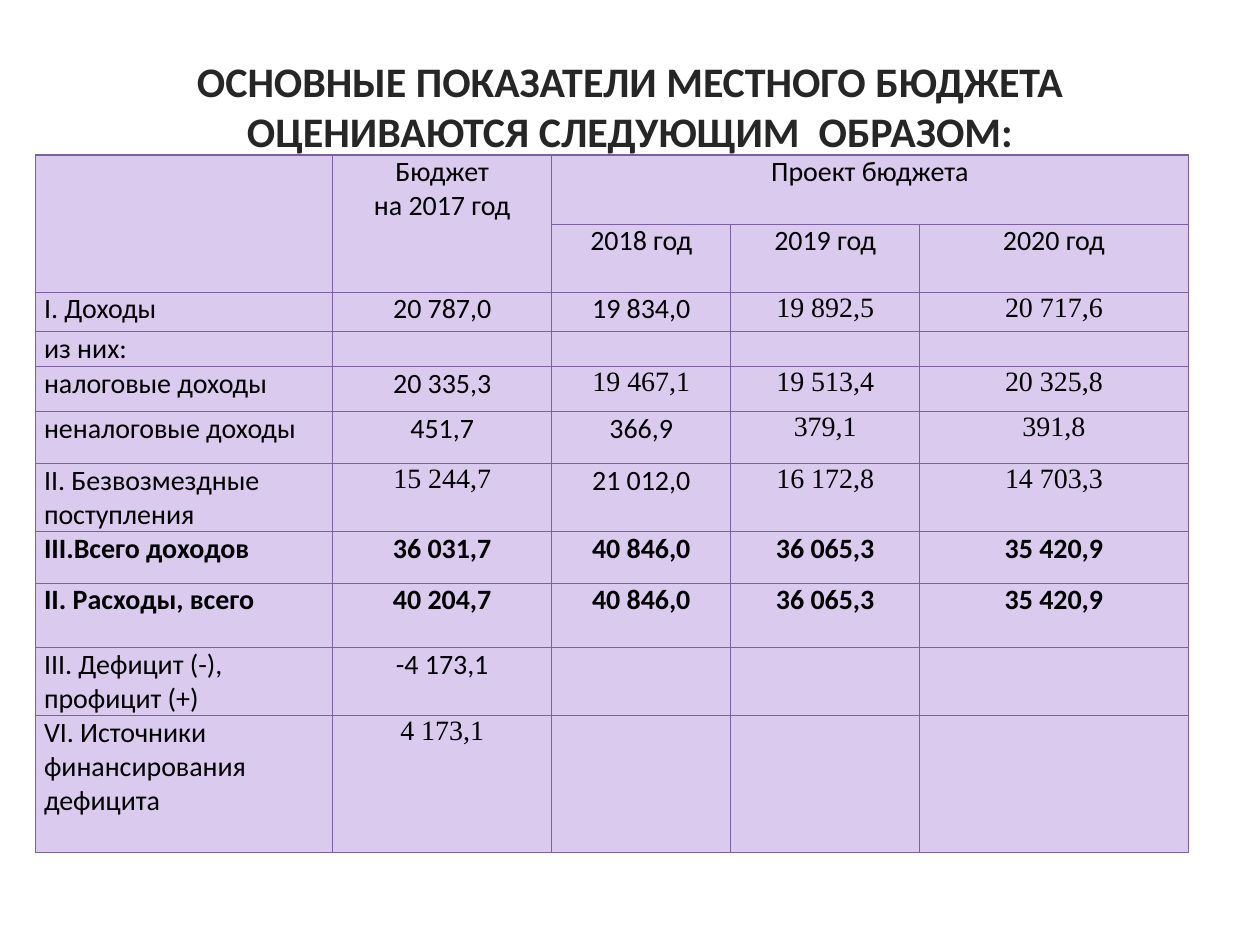
"""Build a slide with the main indicators of the local budget."""
from lxml import etree
from pptx import Presentation
from pptx.dml.color import RGBColor
from pptx.enum.text import MSO_ANCHOR, PP_ALIGN
from pptx.oxml.ns import qn
from pptx.util import Inches, Pt

CENTER, LEFT, JUSTIFY = PP_ALIGN.CENTER, PP_ALIGN.LEFT, PP_ALIGN.JUSTIFY
MIDDLE = MSO_ANCHOR.MIDDLE
SANS, SERIF = "Calibri", "Times New Roman"
BORDER = "7D60A0"


def style(paragraph, size, color, align, bold=False, face=SANS):
    paragraph.alignment = align
    font = paragraph.font
    font.size, font.bold, font.name = Pt(size), bold, face
    font.color.rgb = RGBColor.from_string(color)


def add_borders(cell):
    properties = cell._tc.get_or_add_tcPr()
    for position, side in enumerate(("a:lnL", "a:lnR", "a:lnT", "a:lnB")):
        line = etree.Element(qn(side), w=str(Pt(0.75)))
        fill = etree.SubElement(line, qn("a:solidFill"))
        etree.SubElement(fill, qn("a:srgbClr"), val=BORDER)
        properties.insert(position, line)


presentation = Presentation()
presentation.slide_width, presentation.slide_height = Inches(10), Inches(7.5)
slide = presentation.slides.add_slide(presentation.slide_layouts[6])

title = slide.shapes.add_textbox(Inches(0.5), Inches(0.13), Inches(9), Inches(1.42)).text_frame
title.word_wrap = True
title.vertical_anchor = MIDDLE
title.text = "ОСНОВНЫЕ ПОКАЗАТЕЛИ МЕСТНОГО БЮДЖЕТА ОЦЕНИВАЮТСЯ СЛЕДУЮЩИМ  ОБРАЗОМ:"
style(title.paragraphs[0], 24, "262626", CENTER, bold=True)

rows = [
    ("", "Бюджет\nна 2017 год", "Проект бюджета", "", ""),
    ("", "", "2018 год", "2019 год", "2020 год"),
    ("I. Доходы", "20 787,0", "19 834,0", "19 892,5", "20 717,6"),
    ("из них:", "", "", "", ""),
    ("налоговые доходы", "20 335,3", "19 467,1", "19 513,4", "20 325,8"),
    ("неналоговые доходы", "451,7", "366,9", "379,1", "391,8"),
    ("II. Безвозмездные поступления", "15 244,7", "21 012,0", "16 172,8", "14 703,3"),
    ("III.Всего доходов", "36 031,7", "40 846,0", "36 065,3", "35 420,9"),
    ("II. Расходы, всего", "40 204,7", "40 846,0", "36 065,3", "35 420,9"),
    ("III. Дефицит (-), профицит (+)", "-4 173,1", "", "", ""),
    ("VI. Источники финансирования дефицита", "4 173,1", "", "", ""),
]
column_widths = [2.36, 1.74, 1.42, 1.5, 2.13]
row_heights = [0.55, 0.54, 0.31, 0.28, 0.36, 0.41, 0.54, 0.41, 0.51, 0.54, 1.09]
income_row = 2
total_rows = {7, 8}
serif_columns = {2: (3, 4), 4: (2, 3, 4), 5: (3, 4), 6: (1, 3, 4), 10: (1,)}

budget = slide.shapes.add_table(
    len(rows), len(column_widths), Inches(0.28), Inches(1.23),
    Inches(sum(column_widths)), Inches(sum(row_heights))).table
for column, width in zip(budget.columns, column_widths):
    column.width = Inches(width)
for row, height in zip(budget.rows, row_heights):
    row.height = Inches(height)

for r, values in enumerate(rows):
    for c, value in enumerate(values):
        cell = budget.cell(r, c)
        cell.margin_left = cell.margin_right = Inches(0.07)
        cell.margin_top = cell.margin_bottom = 0
        cell.fill.solid()
        cell.fill.fore_color.rgb = RGBColor.from_string("D9CAEE")
        add_borders(cell)
        cell.text = value
        face = SERIF if c in serif_columns.get(r, ()) else SANS
        align = CENTER if c else JUSTIFY if r == income_row else LEFT
        for paragraph in cell.text_frame.paragraphs:
            style(paragraph, 16, "000000", align, r in total_rows, face)

for first, last in (((0, 0), (1, 0)), ((0, 1), (1, 1)), ((0, 2), (0, 4))):
    budget.cell(*first).merge(budget.cell(*last))

presentation.save("out.pptx")
